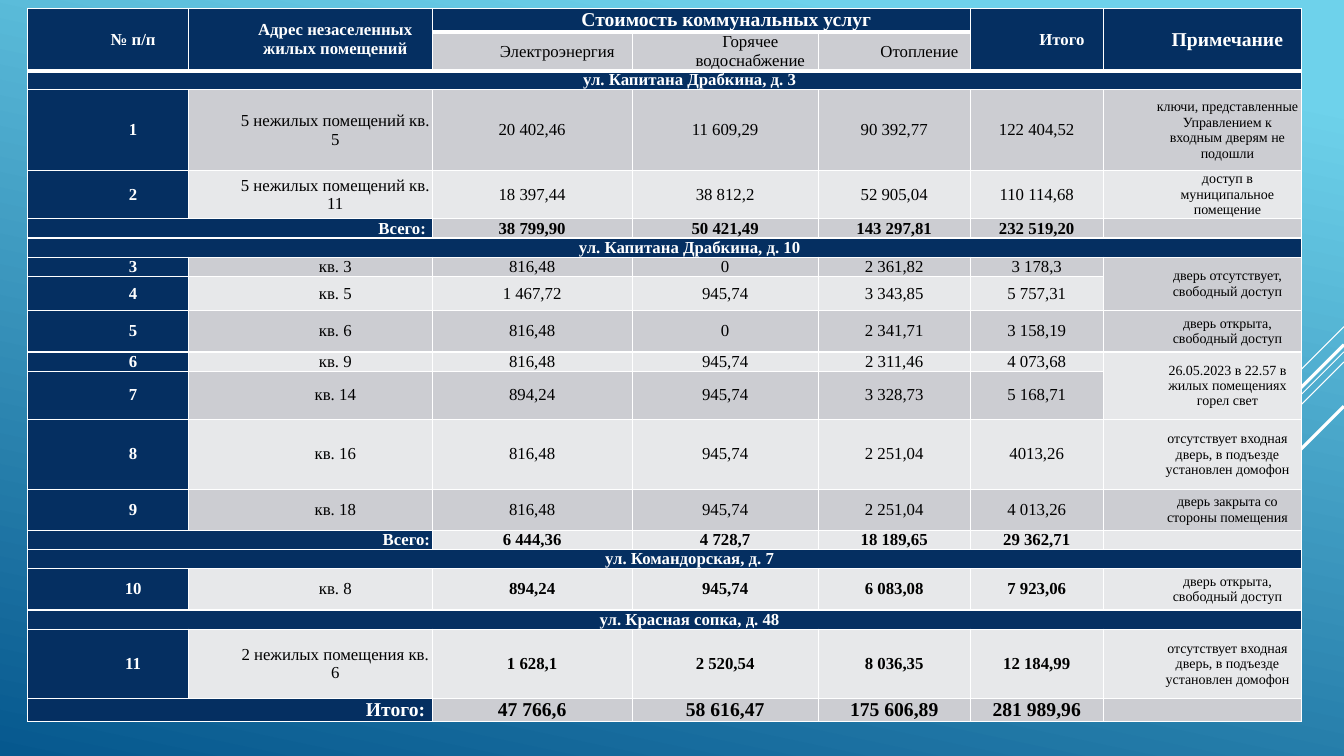
from lxml import etree
from pptx import Presentation
from pptx.dml.color import RGBColor
from pptx.enum.shapes import MSO_CONNECTOR
from pptx.enum.text import MSO_ANCHOR, PP_ALIGN
from pptx.oxml.ns import qn
from pptx.util import Pt

CENTER, RIGHT = PP_ALIGN.CENTER, PP_ALIGN.RIGHT
MIDDLE = MSO_ANCHOR.MIDDLE
STRAIGHT = MSO_CONNECTOR.STRAIGHT

FONT = "Times New Roman"
COLORS = {
    "navy": "052F61", "white": "FFFFFF", "black": "000000",
    "band_dark": "CCCDD2", "band_light": "E7E8EA",
    "sky": "6ED2EB", "deep": "06588E",
}
SLIDE_WIDTH, SLIDE_HEIGHT = 960, 540
INDENT = 36

COLUMN_WIDTHS = [114.6, 174.3, 142.9, 132.9, 108.6, 95, 141.4]
HEADER_HEIGHTS = [17.3, 27.4]
# Column, rows spanned, columns spanned, text, size
HEADERS = [
    (0, 2, 1, "№ п/п", 12),
    (1, 2, 1, "Адрес незаселенных жилых помещений", 12),
    (2, 1, 3, "Стоимость коммунальных услуг", 14),
    (5, 2, 1, "Итого", 12),
    (6, 2, 1, "Примечание", 14),
]
SERVICES = ["Электроэнергия", "Горячее водоснабжение", "Отопление"]

# Kind, height, texts; a note of None continues the note above
BODY = [
    ("section", 13.7, ["ул. Капитана Драбкина, д. 3"]),
    ("item", 57.6, ["1", "5 нежилых помещений кв. 5", "20 402,46", "11 609,29", "90 392,77",
                    "122 404,52",
                    "ключи, представленные Управлением к входным дверям не подошли"]),
    ("item", 34.6, ["2", "5 нежилых помещений кв. 11", "18 397,44", "38 812,2", "52 905,04",
                    "110 114,68", "доступ в муниципальное помещение"]),
    ("total", 13.7, ["Всего: ", "38 799,90", "50 421,49", "143 297,81", "232 519,20"]),
    ("section", 13.7, ["ул. Капитана Драбкина, д. 10"]),
    ("item", 13.7, ["3", "кв. 3", "816,48", "0", "2 361,82", "3 178,3",
                    "дверь отсутствует, свободный доступ"]),
    ("item", 24.5, ["4", "кв. 5", "1 467,72", "945,74", "3 343,85", "5 757,31", None]),
    ("item", 29.5, ["5", "кв. 6", "816,48", "0", "2 341,71", "3 158,19",
                    "дверь открыта, свободный доступ"]),
    ("item", 13.7, ["6", "кв. 9", "816,48", "945,74", "2 311,46", "4 073,68",
                    "26.05.2023 в 22.57 в жилых помещениях горел свет"]),
    ("item", 34.6, ["7", "кв. 14", "894,24", "945,74", "3 328,73", "5 168,71", None]),
    ("item", 49.7, ["8", "кв. 16", "816,48", "945,74", "2 251,04", "4013,26",
                    "отсутствует входная дверь, в подъезде установлен домофон"]),
    ("item", 29.5, ["9", "кв. 18", "816,48", "945,74", "2 251,04", "4 013,26",
                    "дверь закрыта со стороны помещения"]),
    ("total", 13.7, ["Всего:", "6 444,36", "4 728,7", "18 189,65", "29 362,71"]),
    ("section", 13.7, ["ул. Командорская, д. 7"]),
    ("single", 29.5, ["10", "кв. 8", "894,24", "945,74", "6 083,08", "7 923,06",
                      "дверь открыта, свободный доступ"]),
    ("section", 13.7, ["ул. Красная сопка, д. 48"]),
    ("single", 49.7, ["11", "2 нежилых помещения кв. 6", "1 628,1", "2 520,54", "8 036,35",
                      "12 184,99",
                      "отсутствует входная дверь, в подъезде установлен домофон"]),
    ("grand", 16, ["Итого: ", "47 766,6", "58 616,47", "175 606,89", "281 989,96"]),
]

# Top at the right edge, horizontal and vertical run, line width
STREAKS = [(233.3, 72, 0.75), (251.3, 234.7, 0.75), (258.5, 149.5, 0.75),
           (246.2, 137.5, 2.25), (290.2, 100.1, 2.25)]


def rgb(name):
    return RGBColor.from_string(COLORS[name])


def set_borders(cell, bottom=1):
    properties = cell._tc.get_or_add_tcPr()
    for index, side in enumerate(("lnL", "lnR", "lnT", "lnB")):
        line = etree.Element(qn("a:" + side), w=str(Pt(bottom if side == "lnB" else 1)))
        fill = etree.SubElement(line, qn("a:solidFill"))
        etree.SubElement(fill, qn("a:srgbClr"), val=COLORS["white"])
        properties.insert(index, line)


def style_cell(cell, fill, bottom=1):
    cell.fill.solid()
    cell.fill.fore_color.rgb = rgb(fill)
    cell.vertical_anchor = MIDDLE
    cell.margin_left = cell.margin_right = Pt(1.44)
    cell.margin_top = cell.margin_bottom = 0
    set_borders(cell, bottom)


def write_cell(cell, text, size=12, bold=False, color="black", align=CENTER, indent=INDENT):
    paragraph = cell.text_frame.paragraphs[0]
    paragraph.alignment = align
    if indent:
        properties = paragraph._p.get_or_add_pPr()
        properties.set("marL", str(Pt(indent)))
        properties.set("indent", "0")
    if text:
        paragraph.add_run().text = text
    else:
        etree.SubElement(paragraph._p, qn("a:endParaRPr"), sz=str(size * 100))
    font = paragraph.font
    font.name, font.size, font.bold = FONT, Pt(size), bold
    font.color.rgb = rgb(color)


def add_background(slide):
    fill = slide.background.fill
    fill.gradient()
    fill.gradient_angle = 258
    for stop, name, position in zip(fill.gradient_stops, ("sky", "deep"), (0.1, 1)):
        stop.color.rgb = rgb(name)
        stop.position = position


def add_streaks(slide, right):
    for top, run, width in STREAKS:
        streak = slide.shapes.add_connector(
            STRAIGHT, Pt(right), Pt(top), Pt(right - run), Pt(top + run))
        streak.line.color.rgb = rgb("white")
        streak.line.width = Pt(width)
        etree.SubElement(streak._element.spPr, qn("a:effectLst"))


def fill_header(table):
    for column in range(len(COLUMN_WIDTHS)):
        is_service = 2 <= column <= 4
        style_cell(table.cell(0, column), "navy", 3)
        style_cell(table.cell(1, column), "band_dark" if is_service else "navy",
                   1 if is_service else 3)
    for column, rows, columns, text, size in HEADERS:
        cell = table.cell(0, column)
        cell.merge(table.cell(rows - 1, column + columns - 1))
        write_cell(cell, text, size, True, "white")
    for column, text in enumerate(SERVICES, 2):
        write_cell(table.cell(1, column), text)


def fill_body_row(table, row, kind, texts):
    band = "band_dark" if row % 2 else "band_light"
    last = len(COLUMN_WIDTHS) - 1
    is_total = kind in ("total", "grand")
    navy_columns = {"section": last + 1, "total": 2, "grand": 2}.get(kind, 1)
    for column in range(last + 1):
        style_cell(table.cell(row, column), "navy" if column < navy_columns else band)

    # Navy label: row number, street or total
    label = table.cell(row, 0)
    size = 14 if kind == "grand" else 12
    if navy_columns > 1:
        label.merge(table.cell(row, navy_columns - 1))
    write_cell(label, texts[0], size, True, "white", RIGHT if is_total else CENTER)
    if kind == "section":
        return

    # Amounts, with the address before them and the note after
    amounts = texts[1:] if is_total else texts[2:6]
    for column, amount in enumerate(amounts, 2):
        write_cell(table.cell(row, column), amount, size, kind != "item", indent=0)
    if is_total:
        write_cell(table.cell(row, last), "", 10)
        return
    write_cell(table.cell(row, 1), texts[1])
    if texts[6] is None:
        table.cell(row - 1, last).merge(table.cell(row, last))
    else:
        write_cell(table.cell(row, last), texts[6], 10)


def add_cost_table(slide, left, top):
    heights = HEADER_HEIGHTS + [height for _, height, _ in BODY]
    frame = slide.shapes.add_table(len(heights), len(COLUMN_WIDTHS), Pt(left), Pt(top),
                                   Pt(sum(COLUMN_WIDTHS)), Pt(sum(heights)))
    table = frame.table
    table.first_row = table.horz_banding = False
    for column, width in zip(table.columns, COLUMN_WIDTHS):
        column.width = Pt(width)
    for row, height in zip(table.rows, heights):
        row.height = Pt(height)
    fill_header(table)
    for row, (kind, _, texts) in enumerate(BODY, len(HEADER_HEIGHTS)):
        fill_body_row(table, row, kind, texts)


def main():
    presentation = Presentation()
    presentation.slide_width, presentation.slide_height = Pt(SLIDE_WIDTH), Pt(SLIDE_HEIGHT)
    slide = presentation.slides.add_slide(presentation.slide_layouts[6])
    add_background(slide)
    add_streaks(slide, SLIDE_WIDTH)
    add_cost_table(slide, 19.8, 5.8)
    presentation.save("out.pptx")


if __name__ == "__main__":
    main()
